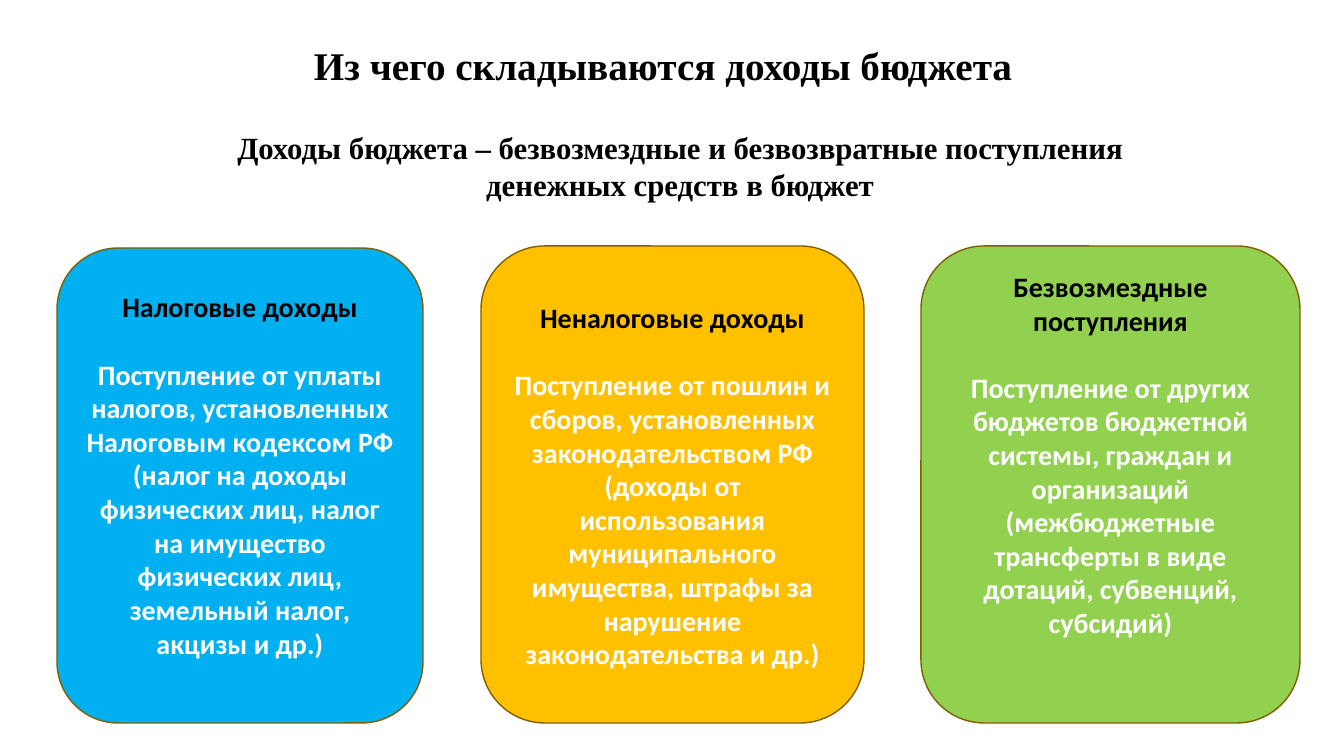
"""Builds the slide on what budget revenues consist of."""
from pptx import Presentation
from pptx.dml.color import RGBColor
from pptx.enum.shapes import MSO_SHAPE
from pptx.enum.text import MSO_ANCHOR, PP_ALIGN
from pptx.util import Emu, Pt

COLORS = {"black": "000000", "white": "FFFFFF", "outline": "806000",
          "blue": "00B0F0", "amber": "FFC000", "green": "92D050"}
SERIF, SANS = "Times New Roman", "Calibri"
TITLE = "Из чего складываются доходы бюджета"
DEFINITION = "Доходы бюджета – безвозмездные и безвозвратные поступления денежных средств в бюджет"
CARDS = [
    {"left": 57, "top": 248, "width": 366, "inset": 24, "fill": "blue",
     "heading": "Налоговые доходы",
     "body": "Поступление от уплаты налогов, установленных Налоговым кодексом РФ "
             "(налог на доходы физических лиц, налог на имущество физических лиц, "
             "земельный налог, акцизы и др.)"},
    {"left": 481, "top": 246, "width": 383, "inset": 36, "fill": "amber",
     "heading": "Неналоговые доходы",
     "body": "Поступление от пошлин и сборов, установленных законодательством РФ "
             "(доходы от использования муниципального имущества, штрафы за "
             "нарушение законодательства и др.)"},
    {"left": 921, "top": 246, "width": 379, "inset": 5, "fill": "green",
     "heading": "Безвозмездные поступления",
     "body": "Поступление от других бюджетов бюджетной системы, граждан и "
             "организаций (межбюджетные трансферты в виде дотаций, субвенций, "
             "субсидий)"},
]
CARD_BOTTOM = 723
PX = 914400 / 100.8


def px(length):
    return Emu(round(length * PX))


def color(name):
    return RGBColor.from_string(COLORS[name])


def write(para, text, font, size, ink):
    para.text = text
    para.alignment = PP_ALIGN.CENTER
    para.font.name = font
    para.font.size = Pt(size)
    para.font.bold = True
    para.font.color.rgb = color(ink)


def add_panel(page, left, top, width, height):
    panel = page.shapes.add_shape(MSO_SHAPE.FLOWCHART_ALTERNATE_PROCESS,
                                  px(left), px(top), px(width), px(height))
    panel.shadow.inherit = False
    panel.text_frame.word_wrap = True
    return panel


def add_card(page, card):
    panel = add_panel(page, card["left"], card["top"], card["width"],
                      CARD_BOTTOM - card["top"])
    panel.fill.solid()
    panel.fill.fore_color.rgb = color(card["fill"])
    panel.line.color.rgb = color("outline")
    panel.line.width = Pt(1)
    frame = panel.text_frame
    frame.vertical_anchor = MSO_ANCHOR.TOP
    frame.margin_top = px(card["inset"])
    heading = frame.paragraphs[0]
    write(heading, card["heading"], SANS, 20, "black")
    heading.space_after = Pt(24)
    write(frame.add_paragraph(), card["body"], SANS, 20, "white")


def main():
    deck = Presentation()
    deck.slide_width, deck.slide_height = px(1344), px(756)
    page = deck.slides.add_slide(deck.slide_layouts[6])

    definition = page.shapes.add_textbox(px(220), px(124), px(920), px(95))
    definition.text_frame.word_wrap = True
    write(definition.text_frame.paragraphs[0], DEFINITION, SERIF, 22, "black")

    for card in CARDS:
        add_card(page, card)

    title = add_panel(page, 199, 19, 928, 92)
    title.fill.background()
    title.line.fill.background()
    title.text_frame.vertical_anchor = MSO_ANCHOR.MIDDLE
    write(title.text_frame.paragraphs[0], TITLE, SERIF, 28, "black")
    deck.save("out.pptx")


if __name__ == "__main__":
    main()
